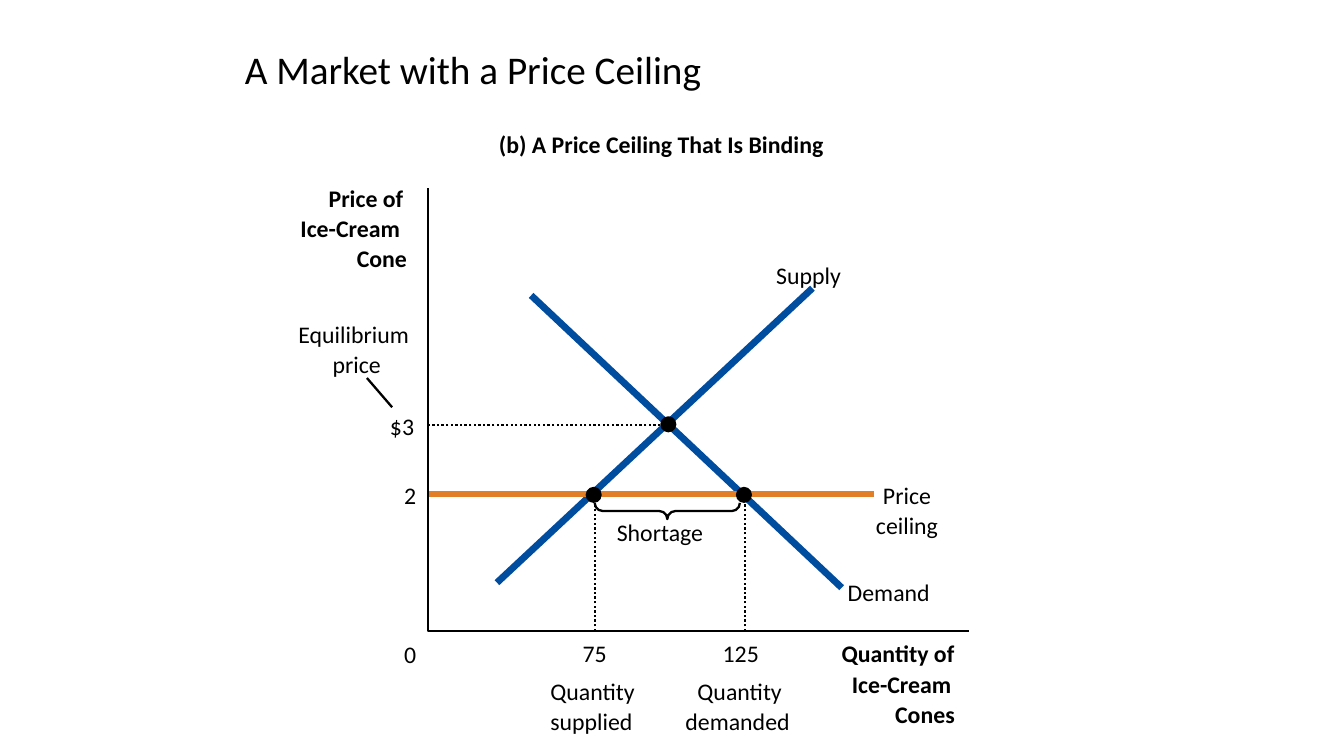
import pptx
import pptx.dml.color
import pptx.enum.dml
import pptx.enum.shapes
import pptx.enum.text
import pptx.oxml
import pptx.util

Pt = pptx.util.Pt
Kind = pptx.enum.shapes.MSO_SHAPE
Text = pptx.enum.text

COLORS = {"ink": "000000", "curve": "004C9F", "ceiling": "E17E26"}
THIN, THICK = 1.63, 4.88
STEP = 21.6

# Places on the graph
LEFT, RIGHT, TOP, BASE = 305.6, 691.9, 134.6, 450.7
SOLD, EVEN, WANTED = 424.8, 478.1, 532.1
FLOOR, LEVEL = 352.8, 303.8

# First line's top, bold or not, then (text, left, width) for each line
LABELS = [
    (92.9, True, [("(b) A Price Ceiling That Is Binding", 356.4, 233.3)]),
    (131, True, [("Price of", 234.7, 54), ("Ice-Cream", 214.6, 71.3), ("Cone", 254.9, 36)]),
    (456.5, True, [("Quantity of", 601.2, 81.4), ("Ice-Cream", 608.4, 71.3), ("Cones", 639.4, 43.2)]),
    (457.2, False, [("0", 288.7, 8.6)]),
    (412.6, False, [("Demand", 605.5, 59)]),
    (186.5, False, [("Supply", 554.4, 46.8)]),
    (343.4, False, [("2", 288.7, 8.6)]),
    (343.4, False, [("Price", 630.7, 34.6), ("ceiling", 625.7, 44.6)]),
    (370.1, False, [("Shortage", 440.6, 61.9)]),
    (456.5, False, [("75", 416.2, 17.3)]),
    (456.5, False, [("125", 516.2, 25.9)]),
    (483.1, False, [("Quantity", 393.1, 61.2), ("supplied", 393.1, 59)]),
    (483.1, False, [("Quantity", 498.2, 61.2), ("demanded", 489.6, 74.9)]),
    (228.2, False, [("Equilibrium", 213.1, 79.2), ("price", 237.6, 34.6)]),
    (293.8, False, [("$3", 278.6, 17.3)]),
]


def tint(name):
    return pptx.dml.color.RGBColor.from_string(COLORS[name])


def apply(target, values):
    for key, value in values.items():
        setattr(target, key, value)


class Board:
    def __init__(self, slide, font="Calibri"):
        self.shapes = slide.shapes
        self.font = font

    def text(self, words, x, y, w, h, size, bold=False, frame=None, para=None):
        box = self.shapes.add_textbox(Pt(x), Pt(y), Pt(w), Pt(h))
        apply(box.text_frame, frame or {})
        first = box.text_frame.paragraphs[0]
        apply(first, para or {})
        run = first.add_run()
        run.text = words
        apply(run.font, {"name": self.font, "size": Pt(size), "bold": bold})
        run.font.color.rgb = tint("ink")

    def title(self, words):
        self.text(words, 167.8, 27.4, 636.5, 50.4, 28,
                  frame={"word_wrap": True, "vertical_anchor": Text.MSO_ANCHOR.MIDDLE},
                  para={"line_spacing": 0.8})

    def label(self, top, bold, lines):
        frame = dict.fromkeys(
            ("margin_left", "margin_right", "margin_top", "margin_bottom"), 0)
        frame.update(word_wrap=False, auto_size=Text.MSO_AUTO_SIZE.SHAPE_TO_FIT_TEXT)
        for row, (words, x, w) in enumerate(lines):
            self.text(words, x, top + row * STEP, w, 20.9, 17, bold, frame)

    def stroke(self, shape, color="ink", width=THIN, dots=False):
        shape.line.color.rgb = tint(color)
        shape.line.width = Pt(width)
        if dots:
            shape.line.dash_style = pptx.enum.dml.MSO_LINE.ROUND_DOT

    def line(self, x1, y1, x2, y2, **style):
        line = self.shapes.add_connector(
            pptx.enum.shapes.MSO_CONNECTOR.STRAIGHT, Pt(x1), Pt(y1), Pt(x2), Pt(y2))
        self.stroke(line, **style)
        pptx.oxml.xmlchemy.OxmlElement
        line._element.spPr.append(pptx.oxml.parse_xml(
            '<a:effectLst xmlns:a="http://schemas.openxmlformats.org/drawingml/2006/main"/>'))

    def dot(self, x, y, size=11.5):
        dot = self.shapes.add_shape(
            Kind.OVAL, Pt(x - size / 2), Pt(y - size / 2), Pt(size), Pt(size))
        dot.shadow.inherit = False
        dot.fill.solid()
        dot.fill.fore_color.rgb = tint("ink")
        dot.line.fill.background()

    def brace(self, x, y, w, h):
        """Draw a brace that points down, in the given box."""
        brace = self.shapes.add_shape(
            Kind.RIGHT_BRACE, Pt(x + (w - h) / 2), Pt(y + (h - w) / 2), Pt(h), Pt(w))
        brace.rotation = 90
        brace.adjustments[0] = 0.5
        brace.shadow.inherit = False
        brace.fill.background()
        self.stroke(brace)

    def axes(self):
        pen = self.shapes.build_freeform(Pt(LEFT), Pt(TOP))
        pen.add_line_segments([(Pt(LEFT), Pt(BASE)), (Pt(RIGHT), Pt(BASE))], close=False)
        axes = pen.convert_to_shape()
        axes.shadow.inherit = False
        axes.fill.background()
        self.stroke(axes)


def main():
    deck = pptx.Presentation()
    apply(deck, {"slide_width": Pt(960), "slide_height": Pt(540)})
    board = Board(deck.slides.add_slide(deck.slide_layouts[6]))

    board.title("A Market with a Price Ceiling")
    board.line(379.4, 211, 601.2, 419.8, color="curve", width=THICK)
    board.line(355, 416.2, 580.3, 205.9, color="curve", width=THICK)
    board.line(624.2, FLOOR, LEFT, FLOOR, color="ceiling", width=THICK)
    board.brace(424.8, 359.3, 103.7, 11.5)
    for x in (SOLD, WANTED):
        board.line(x, BASE, x, FLOOR, dots=True)
        board.dot(x - 0.7, FLOOR + 0.7)
    board.line(280.1, 290.9, 262.1, 270)
    board.line(EVEN, LEVEL, LEFT, LEVEL, dots=True)
    board.dot(EVEN - 0.7, LEVEL - 0.7)
    for label in LABELS:
        board.label(*label)
    board.axes()

    deck.save("out.pptx")


if __name__ == "__main__":
    main()
